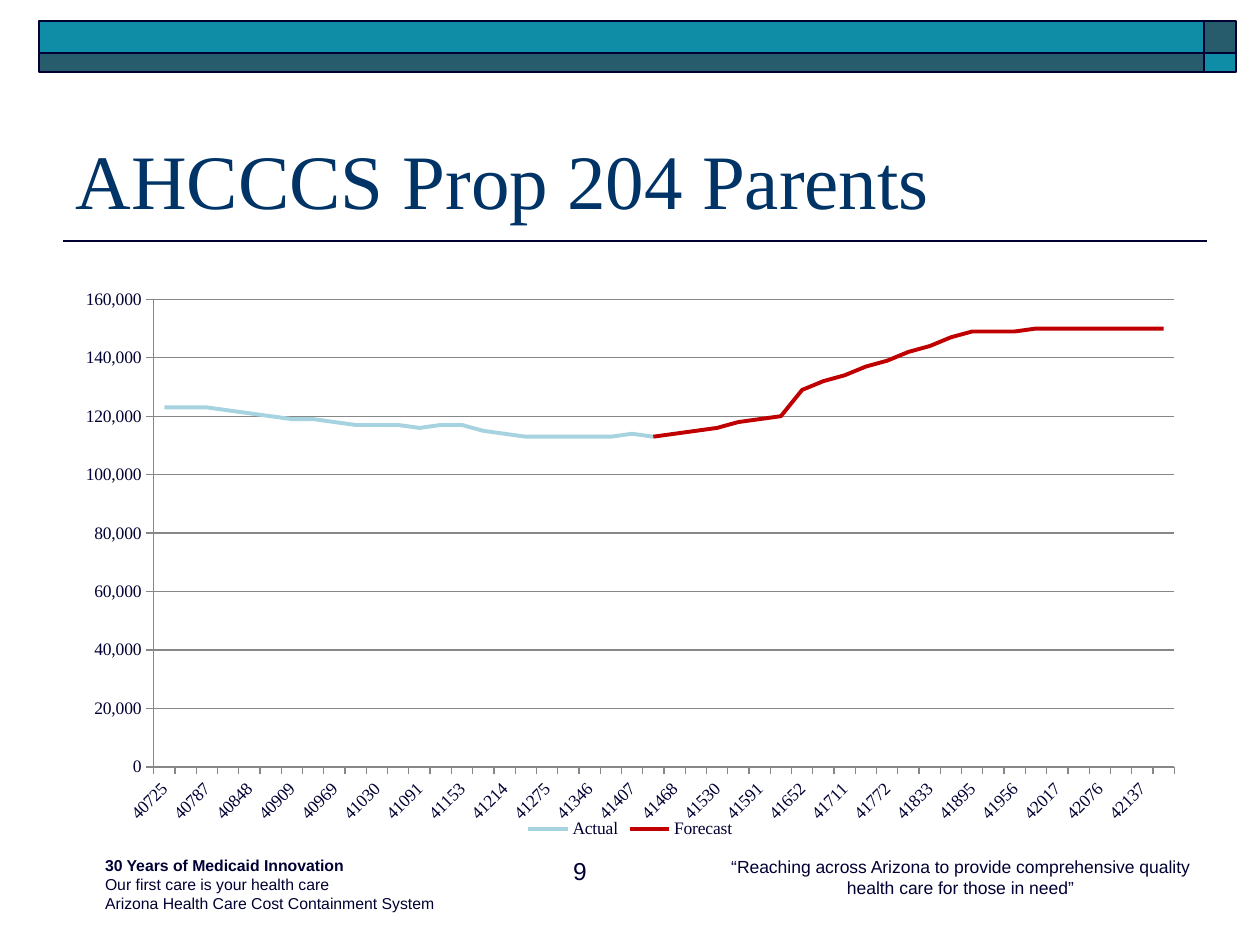
from lxml.etree import SubElement as Sub
from pptx import Presentation
from pptx.chart.data import CategoryChartData as Data
from pptx.dml.color import RGBColor as RGB
from pptx.enum.chart import XL_CHART_TYPE as Kind, XL_LEGEND_POSITION as Spot, XL_TICK_MARK as Tick
from pptx.enum.shapes import MSO_CONNECTOR as Link, MSO_SHAPE as Form
from pptx.enum.text import MSO_ANCHOR as Anchor, PP_ALIGN as Align
from pptx.oxml.ns import qn
from pptx.util import Emu, Pt

TITLE = "AHCCCS Prop 204 Parents"
FOOT = [
    ("30 Years of Medicaid Innovation", True),
    ("Our first care is your health care", False),
    ("Arizona Health Care Cost Containment System", False),
]
QUOTE = [("“Reaching across Arizona to provide comprehensive quality health care for those in need”", False)]
PAGE = [("9", False)]
DAYS = [
    40725, 40756, 40787, 40817, 40848, 40878, 40909, 40940, 40969, 41000, 41030, 41061,
    41091, 41122, 41153, 41194, 41214, 41244, 41275, 41318, 41346, 41377, 41407, 41438,
    41468, 41499, 41530, 41560, 41591, 41621, 41652, 41683, 41711, 41742, 41772, 41803,
    41833, 41864, 41895, 41925, 41956, 41986, 42017, 42048, 42076, 42107, 42137, 42168,
]
ACTUAL = [123, 123, 123, 122, 121, 120, 119, 119, 118, 117, 117, 117,
          116, 117, 117, 115, 114, 113, 113, 113, 113, 113, 114, 113]
FORECAST = [113, 114, 115, 116, 118, 119, 120, 129, 132, 134, 137, 139, 142,
            144, 147, 149, 149, 149, 150, 150, 150, 150, 150, 150, 150]
SERIES = [("Actual", 0, ACTUAL, "actual"), ("Forecast", 23, FORECAST, "forecast")]
PLOT = {"layoutTarget": "inner", "xMode": "edge", "yMode": "edge",
        "x": 0.08, "y": 0.08, "w": 0.9, "h": 0.79}

THEME = {
    "ink": "000033", "title": "003366", "teal": "108DA6", "slate": "275C6D",
    "grid": "878787", "actual": "A7D2DF", "forecast": "C00000",
    "serif": "Times New Roman", "sans": "Arial",
    "head": 44, "small": 9, "body": 10, "page": 14, "rule": 1, "hair": 0.75, "curve": 2.25,
}


def px(*nums):
    return [Emu(round(n * 914400 / 126)) for n in nums]


def tint(name):
    return RGB.from_string(THEME[name])


def put(item, vals):
    for name, val in vals.items():
        setattr(item, name, val)


def style(font, face, size, ink="ink", bold=False):
    put(font, {"name": THEME[face], "size": Pt(THEME[size]), "bold": bold})
    font.color.rgb = tint(ink)


def stroke(line, ink, size):
    line.color.rgb = tint(ink)
    line.width = Pt(THEME[size])


def write(slide, box, rows, size, align, inset=13):
    frame = slide.shapes.add_textbox(*px(*box)).text_frame
    put(frame, {"word_wrap": True, "margin_left": px(inset)[0]})
    for i, (text, bold) in enumerate(rows):
        para = frame.add_paragraph() if i else frame.paragraphs[0]
        put(para, {"text": text, "alignment": align})
        style(para.runs[0].font, "sans", size, bold=bold)


def banner(slide):
    cols, rows = [(39, 1165), (1204, 32)], [(21, 32), (53, 19)]
    for r, (top, high) in enumerate(rows):
        for c, (left, wide) in enumerate(cols):
            bar = slide.shapes.add_shape(Form.RECTANGLE, *px(left, top, wide, high))
            bar.shadow.inherit = False
            bar.fill.solid()
            bar.fill.fore_color.rgb = tint("teal" if r == c else "slate")
            stroke(bar.line, "ink", "rule")
    rule = slide.shapes.add_connector(Link.STRAIGHT, *px(1207, 241, 63, 241))
    stroke(rule.line, "ink", "rule")
    Sub(rule._element.spPr, qn("a:effectLst"))


def heading(slide):
    title = slide.shapes.title
    put(title, dict(zip(("left", "top", "width", "height"), px(63, 73, 1134, 158))))
    frame = title.text_frame
    put(frame, {"text": TITLE, "vertical_anchor": Anchor.BOTTOM, "word_wrap": True})
    frame.paragraphs[0].alignment = Align.LEFT
    style(frame.paragraphs[0].runs[0].font, "serif", "head", "title")


def place(chart):
    area = chart._chartSpace.chart.plotArea
    for old in area.findall(qn("c:layout")):
        area.remove(old)
    lay = Sub(area, qn("c:layout"))
    area.insert(0, lay)
    man = Sub(lay, qn("c:manualLayout"))
    for name, val in PLOT.items():
        Sub(man, qn("c:" + name)).set("val", str(val))


def graph(slide):
    data = Data(number_format="#,##0")
    data.categories = [str(day) for day in DAYS]
    for name, start, vals, _ in SERIES:
        full = [None] * start + [val * 1000 for val in vals]
        data.add_series(name, full + [None] * (len(DAYS) - len(full)))
    chart = slide.shapes.add_chart(Kind.LINE, *px(63, 252, 1134, 592), data).chart
    style(chart.font, "serif", "body")
    put(chart, {"has_title": False, "has_legend": True})
    put(chart.legend, {"position": Spot.BOTTOM, "include_in_layout": False})
    chart.plots[0].vary_by_categories = False
    for line, (_, _, _, ink) in zip(chart.plots[0].series, SERIES):
        line.smooth = False
        stroke(line.format.line, ink, "curve")
    days, count = chart.category_axis, chart.value_axis
    for axis in (days, count):
        put(axis, {"major_tick_mark": Tick.OUTSIDE, "minor_tick_mark": Tick.NONE})
        stroke(axis.format.line, "grid", "hair")
        style(axis.tick_labels.font, "serif", "body")
    put(count, {"minimum_scale": 0, "maximum_scale": 160000, "major_unit": 20000,
                "has_major_gridlines": True})
    stroke(count.major_gridlines.format.line, "grid", "hair")
    put(count.tick_labels, {"number_format": "#,##0", "number_format_is_linked": False})
    node = days._element
    node.find(qn("c:txPr")).find(qn("a:bodyPr")).set("rot", "-2700000")
    skip = Sub(node, qn("c:tickLblSkip"))
    skip.set("val", "2")
    node.find(qn("c:noMultiLvlLbl")).addprevious(skip)
    place(chart)


def main():
    deck = Presentation()
    deck.slide_width, deck.slide_height = px(1260, 945)
    slide = deck.slides.add_slide(deck.slide_layouts[5])
    banner(slide)
    heading(slide)
    graph(slide)
    write(slide, (32, 850, 1176, 66), FOOT, "small", Align.LEFT, 73)
    write(slide, (305, 850, 294, 66), PAGE, "page", Align.RIGHT)
    write(slide, (703, 850, 514, 54), QUOTE, "body", Align.CENTER)
    deck.save("out.pptx")


if __name__ == "__main__":
    main()
